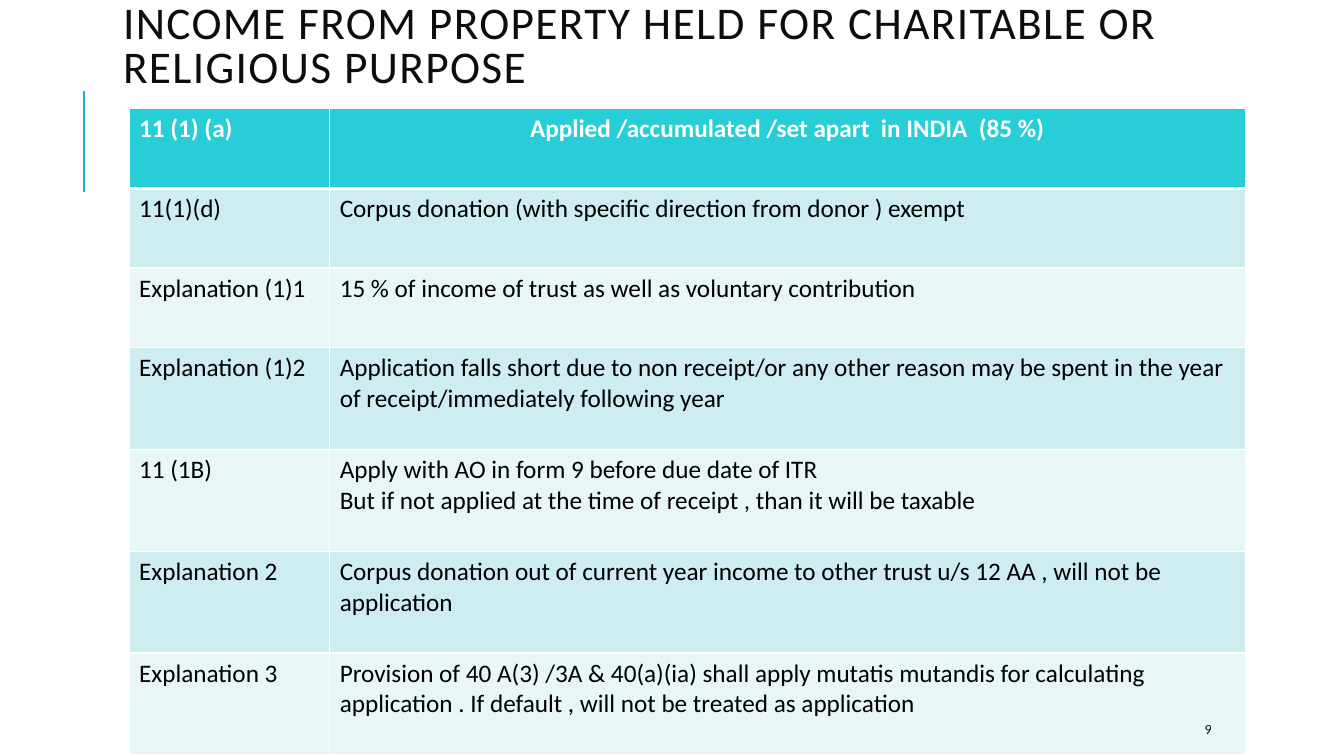
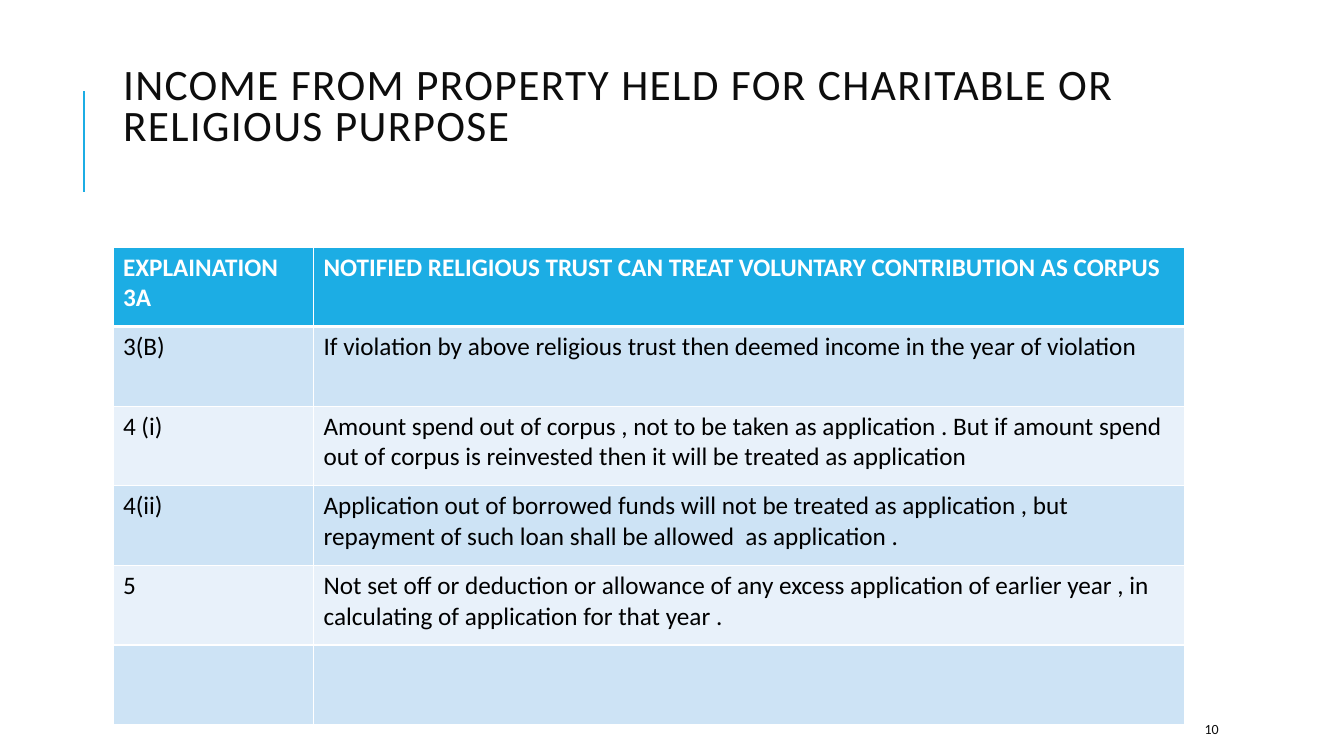
from lxml import etree
from pptx import Presentation
from pptx.dml.color import RGBColor
from pptx.enum.shapes import MSO_CONNECTOR
from pptx.enum.text import MSO_ANCHOR, MSO_AUTO_SIZE, PP_ALIGN
from pptx.oxml.ns import qn
from pptx.util import Inches, Pt

STRAIGHT = MSO_CONNECTOR.STRAIGHT
MIDDLE = MSO_ANCHOR.MIDDLE
NO_FIT = MSO_AUTO_SIZE.NONE
LEFT, CENTER = PP_ALIGN.LEFT, PP_ALIGN.CENTER

COLORS = {"ink": "0D0D0D", "text": "000000", "white": "FFFFFF", "rule": "1CADE4"}
TEAL = {"head": "27CED7", "odd": "CDEDF0", "even": "E8F6F8"}
BLUE = {"head": "1CADE4", "odd": "CDE3F5", "even": "E8F1FA"}
FONT = "Calibri"
TITLE = "INCOME FROM PROPERTY HELD FOR CHARITABLE OR RELIGIOUS PURPOSE"

# box: left, top, width, height; lift: space kept free below the title text
SLIDES = [
    {
        "title": {"box": (1.12, 0.32, 10.73, 0.97), "size": 32.4, "lift": 0.65},
        "number": "9",
        "table": {
            "box": (1.28, 1.08, 11.07, 6.42),
            "first": 1.99,
            "heights": [0.79] * 3 + [1.01] * 4,
            "theme": TEAL,
            "aligns": (LEFT, CENTER),
            "rows": [
                ("11 (1) (a)", "Applied /accumulated /set apart  in INDIA  (85 %)"),
                ("11(1)(d)", "Corpus donation (with specific direction from donor ) exempt"),
                ("Explanation (1)1", "15 % of income of trust as well as voluntary contribution"),
                ("Explanation (1)2", "Application falls short due to non receipt/or any other "
                 "reason may be spent in the year of receipt/immediately following year"),
                ("11 (1B)", "Apply with AO in form 9 before due date of ITR\n"
                 "But if not applied at the time of receipt , than it will be taxable"),
                ("Explanation 2", "Corpus donation out of current year income to other trust "
                 "u/s 12 AA , will not be application"),
                ("Explanation 3", "Provision of 40 A(3) /3A & 40(a)(ia) shall apply mutatis "
                 "mutandis for calculating application . If default , will not be treated "
                 "as application"),
            ],
        },
    },
    {
        "title": {"box": (1.12, 0.64, 10.63, 1.64), "size": 31, "lift": 0.77},
        "number": "10",
        "table": {
            "box": (1.12, 2.45, 10.63, 4.74),
            "first": 1.99,
            "heights": [0.79] * 6,
            "theme": BLUE,
            "aligns": (LEFT, LEFT),
            "rows": [
                ("EXPLAINATION\n3A",
                 "NOTIFIED RELIGIOUS TRUST CAN TREAT VOLUNTARY CONTRIBUTION AS CORPUS"),
                ("3(B)", "If violation by above religious trust then deemed income in the "
                 "year of violation"),
                ("4 (i)", "Amount spend out of corpus , not to be taken as application . But "
                 "if amount spend out of corpus is reinvested then it will be treated as "
                 "application"),
                ("4(ii)", "Application out of borrowed funds will not be treated as "
                 "application , but repayment of such loan shall be allowed  as application ."),
                ("5", "Not set off or deduction or allowance of any excess application of "
                 "earlier year , in calculating of application for that year ."),
                ("", ""),
            ],
        },
    },
]


def rgb(value):
    return RGBColor.from_string(value)


def style(para, color, **format):
    """Apply font values to each run of a paragraph."""
    for run in para.runs:
        for name, value in {"name": FONT, **format}.items():
            setattr(run.font, name, value)
        run.font.color.rgb = rgb(color)


def add_rule(slide, x, top, bottom):
    line = slide.shapes.add_connector(STRAIGHT, Inches(x), Inches(bottom), Inches(x), Inches(top))
    line.line.color.rgb = rgb(COLORS["rule"])
    line.line.width = Pt(1.5)
    etree.SubElement(line._element.spPr, qn("a:effectLst"))


def set_title(slide, box, size, lift):
    title = slide.shapes.title
    for name, value in zip(("left", "top", "width", "height"), box):
        setattr(title, name, Inches(value))
    frame = title.text_frame
    frame.text = TITLE
    values = {"word_wrap": True, "auto_size": NO_FIT, "vertical_anchor": MIDDLE,
              "margin_top": 0, "margin_bottom": Inches(lift)}
    for name, value in values.items():
        setattr(frame, name, value)
    para = frame.paragraphs[0]
    para.alignment = LEFT
    para.line_spacing = 0.8
    style(para, COLORS["ink"], size=Pt(size))
    # Letter spacing of one point
    para.runs[0].font._element.set("spc", "100")


def add_number(slide, text, box):
    frame = slide.shapes.add_textbox(*map(Inches, box)).text_frame
    frame.word_wrap = True
    frame.vertical_anchor = MIDDLE
    frame.text = text
    style(frame.paragraphs[0], COLORS["ink"], size=Pt(10))


def set_edges(cell, row):
    """Draw white cell borders, thick between header and body."""
    props = cell._tc.get_or_add_tcPr()
    thick = {(0, "lnB"), (1, "lnT")}
    for side in ("lnL", "lnR", "lnT", "lnB"):
        width = Pt(3 if (row, side) in thick else 1)
        edge = etree.SubElement(props, qn("a:" + side), w=str(width))
        fill = etree.SubElement(edge, qn("a:solidFill"))
        etree.SubElement(fill, qn("a:srgbClr"), val=COLORS["white"])


def add_grid(slide, box, first, heights, theme, aligns, rows):
    table = slide.shapes.add_table(len(rows), 2, *map(Inches, box)).table
    for col, width in zip(table.columns, (first, box[2] - first)):
        col.width = Inches(width)
    for i, (texts, height) in enumerate(zip(rows, heights)):
        table.rows[i].height = Inches(height)
        head = i == 0
        band = "head" if head else ("even", "odd")[i % 2]
        color = COLORS["white" if head else "text"]
        for j, text in enumerate(texts):
            cell = table.cell(i, j)
            set_edges(cell, i)
            cell.fill.solid()
            cell.fill.fore_color.rgb = rgb(theme[band])
            cell.text = text
            for para in cell.text_frame.paragraphs:
                para.alignment = aligns[j] if head else LEFT
                style(para, color, size=Pt(18), bold=head)


def add_page(deck, data):
    # Title-only layout
    slide = deck.slides.add_slide(deck.slide_layouts[5])
    add_rule(slide, 0.83, 0.9, 1.9)
    set_title(slide, **data["title"])
    add_grid(slide, **data["table"])
    add_number(slide, data["number"], (11.85, 7.08, 1.06, 0.3))


def main():
    deck = Presentation()
    deck.slide_width, deck.slide_height = Inches(13.33), Inches(7.5)
    for data in SLIDES:
        add_page(deck, data)
    deck.save("out.pptx")


if __name__ == "__main__":
    main()
